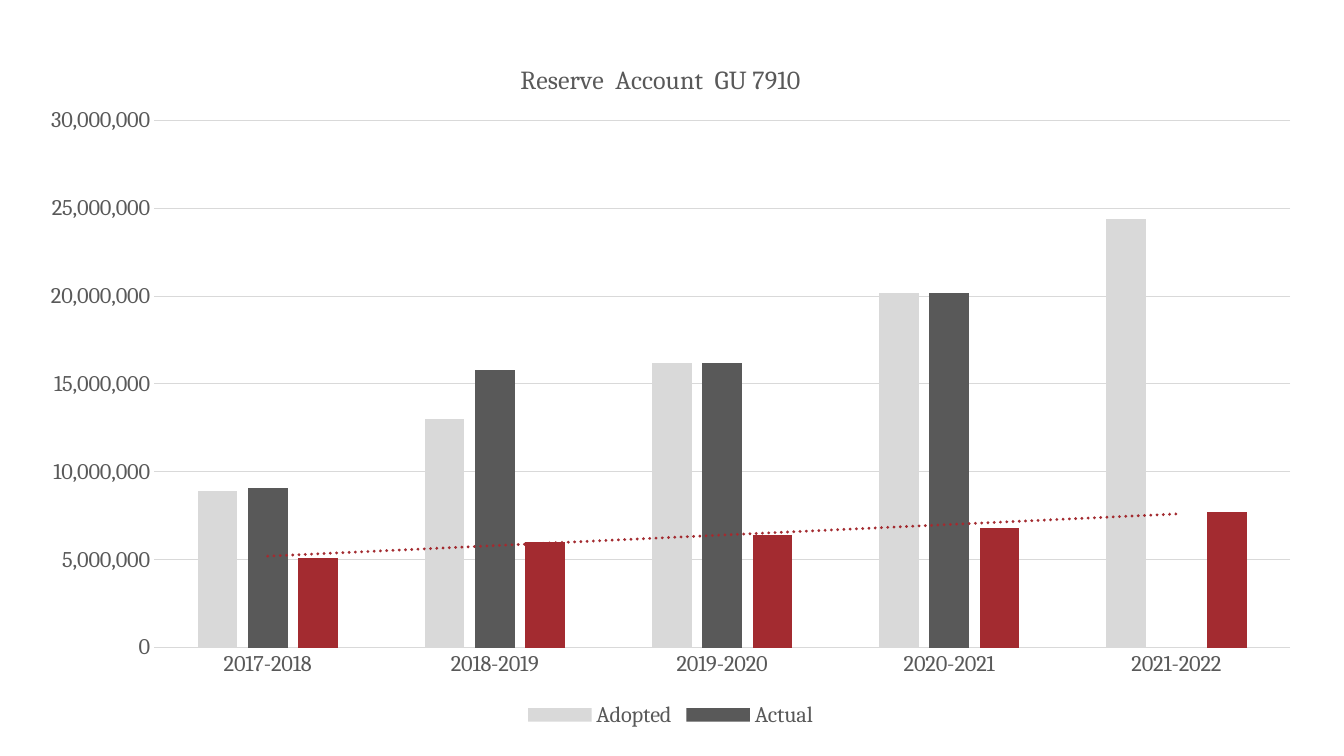
"""Build a slide with a clustered column chart of the reserve account."""
from lxml import etree
from pptx import Presentation
from pptx.chart.data import CategoryChartData
from pptx.dml.color import RGBColor
from pptx.enum.chart import XL_CHART_TYPE as CT, XL_LEGEND_POSITION as LP
from pptx.enum.chart import XL_TICK_MARK as TM
from pptx.oxml import parse_xml
from pptx.oxml.ns import nsdecls, qn
from pptx.util import Emu, Pt

FONT, TEXT, GRID, RED = "Cambria", "595959", "D9D9D9", "A32B30"
YEARS = ["2017-2018", "2018-2019", "2019-2020", "2020-2021", "2021-2022"]
SERIES = [
    ("Adopted", GRID, [8900000, 13000000, 16200000, 20200000, 24400000]),
    ("Actual", TEXT, [9100000, 15800000, 16200000, 20200000, None]),
    ("Series 3", RED, [5100000, 6000000, 6400000, 6800000, 7700000]),
]


def px(n):
    """Turn pixels into EMU."""
    return Emu(round(n * 914400 / 100.8))


def rgb(color):
    """Turn a hex string into a colour."""
    return RGBColor.from_string(color)


def style_font(font, size=16):
    """Set the typeface, size and colour of chart text."""
    font.name, font.size, font.bold = FONT, Pt(size), False
    font.color.rgb = rgb(TEXT)


def style_line(line):
    """Make a thin pale line."""
    line.color.rgb = rgb(GRID)
    line.width = Pt(0.75)


def place(parent, index, **parts):
    """Give a chart part a manual layout in fractions of the chart."""
    for old in parent.findall(qn("c:layout")):
        parent.remove(old)
    layout = etree.Element(qn("c:layout"))
    manual = etree.SubElement(layout, qn("c:manualLayout"))
    for tag, value in parts.items():
        etree.SubElement(manual, qn(f"c:{tag}"), val=str(value))
    parent.insert(index, layout)


def add_title(chart, text):
    """Write the chart title."""
    tf = chart.chart_title.text_frame
    r = tf.paragraphs[0].add_run()
    r.text = text
    style_font(r.font, 18.6)
    place(chart.chart_title._element, 1, xMode="edge", yMode="edge", x=0.38, y=0.04)


def style_axes(chart):
    """Format both axes and the gridlines."""
    for axis in (chart.category_axis, chart.value_axis):
        axis.major_tick_mark = axis.minor_tick_mark = TM.NONE
        style_font(axis.tick_labels.font)
    style_line(chart.category_axis.format.line)
    values = chart.value_axis
    values.minimum_scale, values.maximum_scale, values.major_unit = 0, 30000000, 5000000
    values.format.line.fill.background()
    style_line(values.major_gridlines.format.line)
    values.tick_labels.number_format = "#,##0"
    values.tick_labels.number_format_is_linked = False


def add_trend(series, color):
    """Add a dotted linear trend line to a series."""
    trend = parse_xml(
        f'<c:trendline {nsdecls("c", "a")}><c:spPr><a:ln w="{Pt(2.25)}" cap="rnd">'
        f'<a:solidFill><a:srgbClr val="{color}"/></a:solidFill>'
        '<a:prstDash val="sysDot"/></a:ln></c:spPr><c:trendlineType val="linear"/>'
        '<c:dispRSqr val="0"/><c:dispEq val="0"/></c:trendline>')
    series._element.find(qn("c:cat")).addprevious(trend)


def add_legend(chart, hidden):
    """Put the legend at the bottom without the hidden entries."""
    chart.has_legend = True
    legend = chart.legend
    legend.position, legend.include_in_layout = LP.BOTTOM, False
    style_font(legend.font)
    for offset, index in enumerate(hidden):
        entry = etree.Element(qn("c:legendEntry"))
        etree.SubElement(entry, qn("c:idx"), val=str(index))
        etree.SubElement(entry, qn("c:delete"), val="1")
        legend._element.insert(1 + offset, entry)


def add_columns(s):
    """Add the column chart and colour its series."""
    data = CategoryChartData(number_format="#,##0")
    data.categories = YEARS
    for name, _, values in SERIES:
        data.add_series(name, values)
    chart = s.shapes.add_chart(
        CT.COLUMN_CLUSTERED, px(25), px(29), px(1291), px(703), data).chart
    style_font(chart.font)
    plot = chart.plots[0]
    plot.gap_width, plot.overlap, plot.vary_by_categories = 219, -27, False
    for series, (_, color, _) in zip(plot.series, SERIES):
        series.format.fill.solid()
        series.format.fill.fore_color.rgb = rgb(color)
        series.invert_if_negative = False
    add_trend(plot.series[2], RED)
    place(chart._chartSpace.chart.plotArea, 0, layoutTarget="inner", xMode="edge",
          yMode="edge", x=0.1, y=0.13, w=0.88, h=0.75)
    return chart


def main():
    """Build and save the slide."""
    prs = Presentation()
    prs.slide_width, prs.slide_height = px(1344), px(756)
    s = prs.slides.add_slide(prs.slide_layouts[6])
    chart = add_columns(s)
    add_title(chart, "Reserve  Account  GU 7910")
    style_axes(chart)
    add_legend(chart, [2, 3])
    prs.save("out.pptx")


if __name__ == "__main__":
    main()
